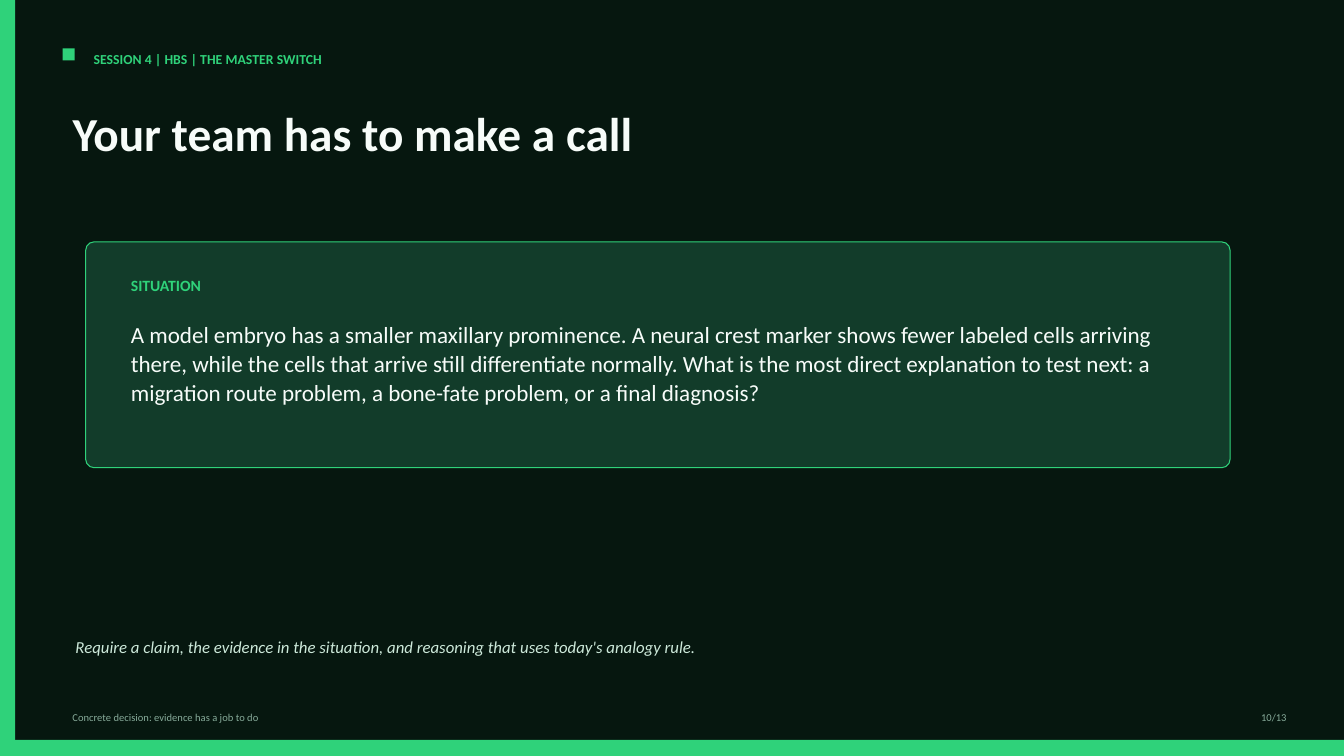
from pptx import Presentation
from pptx import util as u
from pptx.dml.color import RGBColor
from pptx.enum import shapes, text

WIDTH, HEIGHT = 13.33, 7.5
FONT = "Calibri"
BACKGROUND, PANEL, ACCENT = "06170F", "123C2A", "2FD27A"
BRIGHT, SOFT, MUTED = "F7FCF9", "CDE9DA", "87AB9A"


def color(value):
    return RGBColor.from_string(value)


def place(shape, box):
    shape.left, shape.top, shape.width, shape.height = map(u.Inches, box)


def write(shape, wording, size, ink, bold=False, italic=False, spacing=None,
          align=text.PP_ALIGN.LEFT):
    frame = shape.text_frame
    frame.word_wrap = True
    frame.auto_size = text.MSO_AUTO_SIZE.NONE
    frame.vertical_anchor = text.MSO_ANCHOR.TOP
    paragraph = frame.paragraphs[0]
    paragraph.text = wording
    paragraph.alignment = align
    if spacing:
        paragraph.line_spacing = spacing
    font = paragraph.font
    font.name, font.size, font.bold, font.italic = FONT, u.Pt(size), bold, italic
    font.color.rgb = color(ink)


def add_text(slide, box, *wording, **style):
    write(slide.shapes.add_textbox(*map(u.Inches, box)), *wording, **style)


def add_block(slide, box, fill, kind=shapes.MSO_SHAPE.RECTANGLE):
    shape = slide.shapes.add_shape(kind, *map(u.Inches, box))
    shape.shadow.inherit = False
    shape.fill.solid()
    shape.fill.fore_color.rgb = color(fill)
    shape.line.fill.background()
    return shape


def add_frame(slide, box):
    """Accent bars along the left and bottom edges."""
    left, top, width, height = box
    add_block(slide, (left, top, 0.15, height), ACCENT)
    add_block(slide, (left, top + height - 0.16, width, 0.16), ACCENT)


def add_header(slide, box, session, heading):
    """Square marker, session label and slide title."""
    left, top, width, height = box
    add_block(slide, (left, top + 0.03, 0.12, 0.12), ACCENT)
    add_text(slide, (left + 0.21, top, 6.46, 0.25), session, 9.8, ACCENT, bold=True)
    title = slide.shapes.title
    place(title, (left, top + 0.59, width, height - 0.59))
    write(title, heading, 33.8, BRIGHT, bold=True, spacing=0.92)


def add_situation(slide, box, label, story):
    """Rounded panel with a label above the story."""
    left, top, width, height = box
    panel = add_block(slide, box, PANEL, shapes.MSO_SHAPE.ROUNDED_RECTANGLE)
    panel.adjustments[0] = 0.037
    panel.line.color.rgb = color(ACCENT)
    panel.line.width = u.Pt(0.75)
    inner = left + 0.35
    add_text(slide, (inner, top + 0.29, 2.71, 0.26), label, 11.2, ACCENT, bold=True)
    add_text(slide, (inner, top + 0.72, width - 0.67, height - 1.01),
             story, 16.5, BRIGHT, spacing=1.05)


def add_footer(slide, box, note, page):
    """Note on the left, page count on the right."""
    left, top, width, height = box
    add_text(slide, (left, top, 9.38, height), note, 7.5, MUTED)
    add_text(slide, (left + width - 0.83, top, 0.83, height), page, 7.5, MUTED,
             align=text.PP_ALIGN.RIGHT)


def add_decision_slide(presentation):
    slide = presentation.slides.add_slide(presentation.slide_layouts[5])
    slide.background.fill.solid()
    slide.background.fill.fore_color.rgb = color(BACKGROUND)
    add_frame(slide, (0, 0, WIDTH, HEIGHT))
    add_header(slide, (0.62, 0.45, 11.46, 1.47),
               "SESSION 4 | HBS | THE MASTER SWITCH", "Your team has to make a call")
    add_situation(
        slide, (0.85, 2.4, 11.35, 2.24), "SITUATION",
        "A model embryo has a smaller maxillary prominence. A neural crest marker "
        "shows fewer labeled cells arriving there, while the cells that arrive still "
        "differentiate normally. What is the most direct explanation to test next: a "
        "migration route problem, a bone-fate problem, or a final diagnosis?")
    # Instruction for the team
    add_text(slide, (0.65, 6.25, 11.25, 0.46),
             "Require a claim, the evidence in the situation, and reasoning that uses "
             "today's analogy rule.", 12, SOFT, italic=True, spacing=1.1)
    add_footer(slide, (0.62, 7, 12.24, 0.19),
               "Concrete decision: evidence has a job to do", "10/13")


def main():
    presentation = Presentation()
    presentation.slide_width = u.Inches(WIDTH)
    presentation.slide_height = u.Inches(HEIGHT)
    add_decision_slide(presentation)
    presentation.save("out.pptx")


if __name__ == "__main__":
    main()
